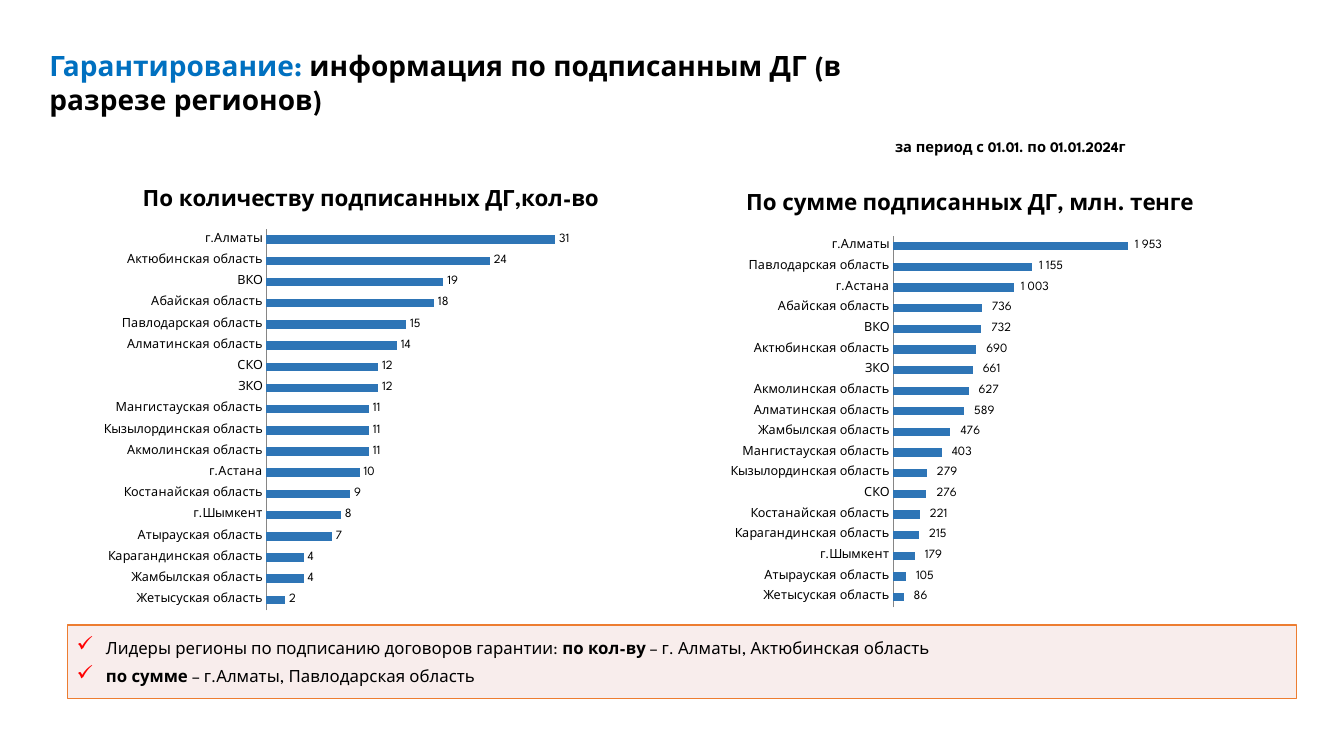
from lxml import etree
from pptx import Presentation, util as u
from pptx.chart.data import CategoryChartData
from pptx.dml.color import RGBColor
from pptx.enum import chart as chart_enum, shapes, text
from pptx.oxml import parse_xml
from pptx.oxml.ns import nsdecls, qn

COLORS = {"black": "000000", "blue": "0070C0", "bar": "2E75B6", "axis": "868686",
          "pink": "F2DCDB", "orange": "ED7D31", "red": "FF0000"}
FONT = "League Spartan"
MILLIONS = r'_-* #\ ##0_р_._-;\-* #\ ##0_р_._-;_-* "-"??_р_._-;_-@_-'

COUNTS = {
    "Жетысуская область": 2, "Жамбылская область": 4, "Карагандинская область": 4,
    "Атырауская область": 7, "г.Шымкент": 8, "Костанайская область": 9,
    "г.Астана": 10, "Акмолинская область": 11, "Кызылординская область": 11,
    "Мангистауская область": 11, "ЗКО": 12, "СКО": 12, "Алматинская область": 14,
    "Павлодарская область": 15, "Абайская область": 18, "ВКО": 19,
    "Актюбинская область": 24, "г.Алматы": 31,
}
SUMS = {
    "Жетысуская область": 86, "Атырауская область": 105, "г.Шымкент": 179,
    "Карагандинская область": 215, "Костанайская область": 221, "СКО": 276,
    "Кызылординская область": 279, "Мангистауская область": 403,
    "Жамбылская область": 476, "Алматинская область": 589,
    "Акмолинская область": 627, "ЗКО": 661, "Актюбинская область": 690, "ВКО": 732,
    "Абайская область": 736, "г.Астана": 1003, "Павлодарская область": 1155,
    "г.Алматы": 1953,
}


def rgb(name):
    return RGBColor.from_string(COLORS[name])


def inches(*lengths):
    return [u.Inches(length) for length in lengths]


class RegionSlide:
    def __init__(self, presentation):
        self.slide = presentation.slides.add_slide(presentation.slide_layouts[5])

    def style(self, font, size, color="black", bold=None, name=FONT):
        font.name, font.size, font.bold = name, u.Pt(size), bold
        font.color.rgb = rgb(color)

    def title(self, box, lead, rest):
        title = self.slide.shapes.title
        title.left, title.top, title.width, title.height = inches(*box)
        frame = title.text_frame
        frame.word_wrap = True
        frame.auto_size = text.MSO_AUTO_SIZE.SHAPE_TO_FIT_TEXT
        frame.vertical_anchor = text.MSO_ANCHOR.TOP
        paragraph = frame.paragraphs[0]
        paragraph.alignment = text.PP_ALIGN.LEFT
        for words, color in ((lead, "blue"), (rest, "black")):
            run = paragraph.add_run()
            run.text = words
            self.style(run.font, 20, color, True)

    def label(self, box, words):
        frame = self.slide.shapes.add_textbox(*inches(*box)).text_frame
        frame.word_wrap = False
        frame.auto_size = text.MSO_AUTO_SIZE.SHAPE_TO_FIT_TEXT
        frame.text = words
        self.style(frame.paragraphs[0].font, 10.5, bold=True)

    def bar_chart(self, box, title, values, plot, maximum, number_format="General"):
        """Draw a bar chart; plot holds the inner plot area as fractions x, y, w, h."""
        data = CategoryChartData()
        data.categories = list(values)
        data.add_series("Series 1", list(values.values()))
        chart = self.slide.shapes.add_chart(
            chart_enum.XL_CHART_TYPE.BAR_CLUSTERED, *inches(*box), data).chart
        self.style(chart.font, 10, name="Calibri")
        chart.has_legend = False
        chart.has_title = True
        chart.chart_title.include_in_layout = False
        chart.chart_title.text_frame.text = title
        self.style(chart.chart_title.text_frame.paragraphs[0].runs[0].font, 16, bold=True)

        regions = chart.category_axis
        regions.major_tick_mark = chart_enum.XL_TICK_MARK.NONE
        regions.format.line.color.rgb = rgb("axis")
        self.style(regions.tick_labels.font, 9)
        scale = chart.value_axis
        scale.visible = scale.has_major_gridlines = False
        scale.minimum_scale, scale.maximum_scale = 0, maximum

        bars = chart.plots[0]
        bars.gap_width = 150
        bars.vary_by_categories = False
        fill = bars.series[0].format.fill
        fill.solid()
        fill.fore_color.rgb = rgb("bar")
        bars.has_data_labels = True
        labels = bars.data_labels
        labels.show_value = True
        labels.position = chart_enum.XL_LABEL_POSITION.OUTSIDE_END
        labels.number_format = number_format
        labels.number_format_is_linked = False
        self.style(labels.font, 9)
        self.place_plot(chart, plot)

    def place_plot(self, chart, plot):
        area = chart.plots[0]._element.getparent()
        for old in area.findall(qn("c:layout")):
            area.remove(old)
        settings = [("layoutTarget", "inner"), ("xMode", "edge"), ("yMode", "edge")]
        settings += zip("xywh", plot)
        parts = "".join(f'<c:{tag} val="{value}"/>' for tag, value in settings)
        area.insert(0, parse_xml(f'<c:layout {nsdecls("c")}><c:manualLayout>{parts}'
                                 '</c:manualLayout></c:layout>'))

    def summary(self, box, lines):
        """Draw the tinted box of check-marked lines, each a list of (words, bold)."""
        shape = self.slide.shapes.add_shape(shapes.MSO_SHAPE.RECTANGLE, *inches(*box))
        shape.shadow.inherit = False
        shape.fill.solid()
        shape.fill.fore_color.rgb = rgb("pink")
        color = shape.fill._xPr.find(f'{qn("a:solidFill")}/{qn("a:srgbClr")}')
        etree.SubElement(color, qn("a:alpha"), val="50000")
        shape.line.color.rgb = rgb("orange")
        shape.line.width = u.Pt(1)
        frame = shape.text_frame
        frame.word_wrap = True
        frame.vertical_anchor = text.MSO_ANCHOR.MIDDLE
        frame.margin_left = frame.margin_right = u.Inches(0.08)
        frame.margin_top = frame.margin_bottom = u.Inches(0.04)
        for index, line in enumerate(lines):
            paragraph = frame.add_paragraph() if index else frame.paragraphs[0]
            paragraph.alignment = text.PP_ALIGN.LEFT
            paragraph.space_after = u.Pt(6)
            self.check_mark(paragraph)
            for words, bold in line:
                run = paragraph.add_run()
                run.text = words
                self.style(run.font, 12, bold=bold)

    def check_mark(self, paragraph):
        properties = paragraph._p.get_or_add_pPr()
        properties.set("marL", str(u.Inches(0.3)))
        properties.set("indent", str(u.Inches(-0.29)))
        color = etree.SubElement(properties, qn("a:buClr"))
        etree.SubElement(color, qn("a:srgbClr"), val=COLORS["red"])
        etree.SubElement(properties, qn("a:buSzPct"), val="125000")
        etree.SubElement(properties, qn("a:buChar"), char="✓")


def main():
    presentation = Presentation()
    presentation.slide_width, presentation.slide_height = inches(13.33, 7.5)
    slide = RegionSlide(presentation)
    slide.title((0.39, 0.43, 9.14, 0.77), "Гарантирование: ",
                "информация по подписанным ДГ (в разрезе регионов)")
    slide.label((8.78, 1.32, 2.63, 0.28), "за период с 01.01. по 01.01.2024г")
    slide.summary((0.67, 6.2, 12.19, 0.73), [
        [("Лидеры регионы по подписанию договоров гарантии: ", False),
         ("по кол-ву", True), (" – г. Алматы, Актюбинская область", False)],
        [("по сумме ", True), ("– г.Алматы, Павлодарская область", False)],
    ])
    slide.bar_chart((0.63, 1.68, 6.1, 4.56), "По количеству подписанных ДГ,кол-во",
                    COUNTS, (0.33, 0.13, 0.53, 0.83), 35)
    slide.bar_chart((6.45, 1.72, 6.34, 4.44), "По сумме подписанных ДГ, млн. тенге",
                    SUMS, (0.38, 0.14, 0.47, 0.83), 2500, MILLIONS)
    presentation.save("out.pptx")


if __name__ == "__main__":
    main()
